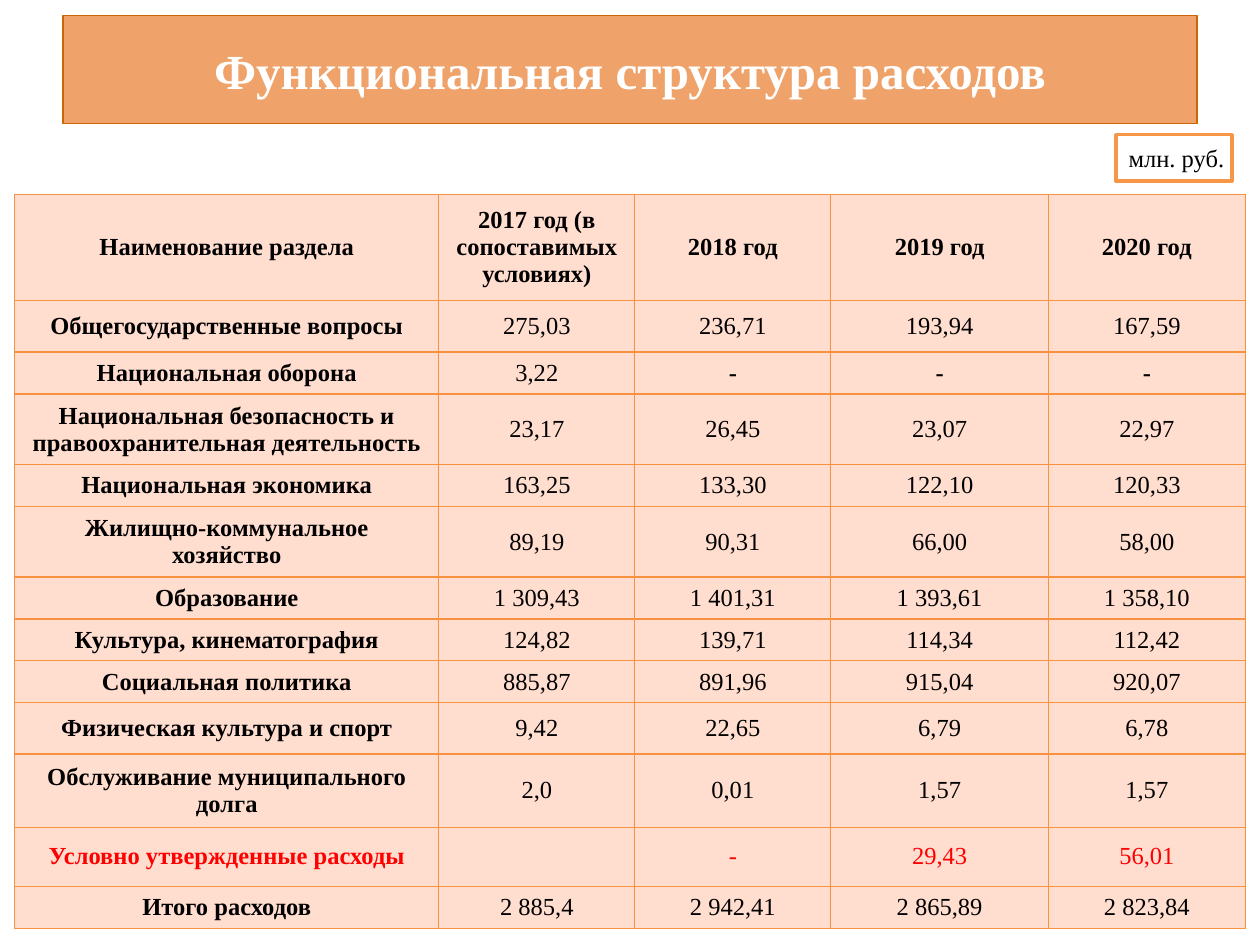
from lxml import etree
from pptx import Presentation
from pptx import util as u
from pptx.dml.color import RGBColor
from pptx.enum import shapes, text
from pptx.oxml import ns

COLORS = {
    "banner": "E97C2B", "banner_edge": "CC6600", "unit_edge": "F79646",
    "cell": "FFDDCF", "border": "F69240",
    "white": "FFFFFF", "black": "000000", "red": "FF0000",
}
TITLE = "Функциональная структура расходов"
UNIT = "млн. руб."
HEADINGS = ["Наименование раздела", "2017 год (в сопоставимых условиях)",
            "2018 год", "2019 год", "2020 год"]
SECTIONS = [
    ["Общегосударственные вопросы", "275,03", "236,71", "193,94", "167,59"],
    ["Национальная оборона", "3,22", "-", "-", "-"],
    ["Национальная безопасность и правоохранительная деятельность",
     "23,17", "26,45", "23,07", "22,97"],
    ["Национальная экономика", "163,25", "133,30", "122,10", "120,33"],
    ["Жилищно-коммунальное хозяйство", "89,19", "90,31", "66,00", "58,00"],
    ["Образование", "1 309,43", "1 401,31", "1 393,61", "1 358,10"],
    ["Культура, кинематография", "124,82", "139,71", "114,34", "112,42"],
    ["Социальная политика", "885,87", "891,96", "915,04", "920,07"],
    ["Физическая культура и спорт", "9,42", "22,65", "6,79", "6,78"],
    ["Обслуживание муниципального долга", "2,0", "0,01", "1,57", "1,57"],
    ["Условно утвержденные расходы", "", "-", "29,43", "56,01"],
    ["Итого расходов", "2 885,4", "2 942,41", "2 865,89", "2 823,84"],
]
CONDITIONAL = "Условно утвержденные расходы"
DEFENCE = "Национальная оборона"
COLUMN_WIDTHS = [242.4, 112, 112, 124.4, 112.4]
LINE_HEIGHT = 24
ROW_HEIGHTS = [60.5, 29.5, LINE_HEIGHT, 40.3, LINE_HEIGHT, 40.3, LINE_HEIGHT,
               LINE_HEIGHT, LINE_HEIGHT, 29.2, 41.8, 33.8, LINE_HEIGHT]


def rgb(name):
    return RGBColor.from_string(COLORS[name])


def write(frame, words, size=14, color="black", bold=False, align="CENTER"):
    paragraph = frame.paragraphs[0]
    paragraph.alignment = getattr(text.PP_ALIGN, align)
    run = paragraph.add_run()
    run.text = words
    run.font.name = "Times New Roman"
    run.font.size = u.Pt(size)
    run.font.bold = bold
    run.font.color.rgb = rgb(color)


def add_box(slide, bounds, fill, edge, edge_width, wrap):
    box = slide.shapes.add_shape(shapes.MSO_SHAPE.RECTANGLE, *map(u.Pt, bounds))
    box.shadow.inherit = False
    box.fill.solid()
    box.fill.fore_color.rgb = rgb(fill)
    box.line.color.rgb = rgb(edge)
    box.line.width = u.Pt(edge_width)
    box.text_frame.word_wrap = wrap
    box.text_frame.vertical_anchor = text.MSO_ANCHOR.MIDDLE
    return box


def style_cell(cell):
    properties = cell._tc.get_or_add_tcPr()
    for side in ("lnL", "lnR", "lnT", "lnB"):
        border = etree.SubElement(properties, ns.qn(f"a:{side}"), w=str(u.Pt(0.75)))
        paint = etree.SubElement(border, ns.qn("a:solidFill"))
        etree.SubElement(paint, ns.qn("a:srgbClr"), val=COLORS["border"])
    cell.fill.solid()
    cell.fill.fore_color.rgb = rgb("cell")
    cell.vertical_anchor = text.MSO_ANCHOR.MIDDLE


def add_budget(slide):
    rows = [HEADINGS] + SECTIONS
    budget = slide.shapes.add_table(
        len(rows), len(HEADINGS), u.Pt(8.4), u.Pt(111.2),
        u.Pt(sum(COLUMN_WIDTHS)), u.Pt(sum(ROW_HEIGHTS))).table
    for column, width in zip(budget.columns, COLUMN_WIDTHS):
        column.width = u.Pt(width)
    for row, height in zip(budget.rows, ROW_HEIGHTS):
        row.height = u.Pt(height)
    for r, entries in enumerate(rows):
        section = entries[0]
        color = "red" if section == CONDITIONAL else "black"
        for c, words in enumerate(entries):
            cell = budget.cell(r, c)
            style_cell(cell)
            if words:
                bold = r == 0 or c == 0 or (section == DEFENCE and words == "-")
                write(cell.text_frame, words, color=color, bold=bold)


def main():
    deck = Presentation()
    deck.slide_width, deck.slide_height = u.Pt(720), u.Pt(540)
    slide = deck.slides.add_slide(deck.slide_layouts[6])

    banner = add_box(slide, (36, 9, 648, 61.5), "banner", "banner_edge", 0.75, True)
    tint = banner.fill._xPr.find(ns.qn("a:solidFill"))[0]
    etree.SubElement(tint, ns.qn("a:alpha"), val="70000")
    write(banner.text_frame, TITLE, size=28, color="white", bold=True)

    unit = add_box(slide, (637.8, 77, 66.3, 26.6), "white", "unit_edge", 2, False)
    write(unit.text_frame, UNIT, align="LEFT")

    add_budget(slide)
    deck.save("out.pptx")


if __name__ == "__main__":
    main()
